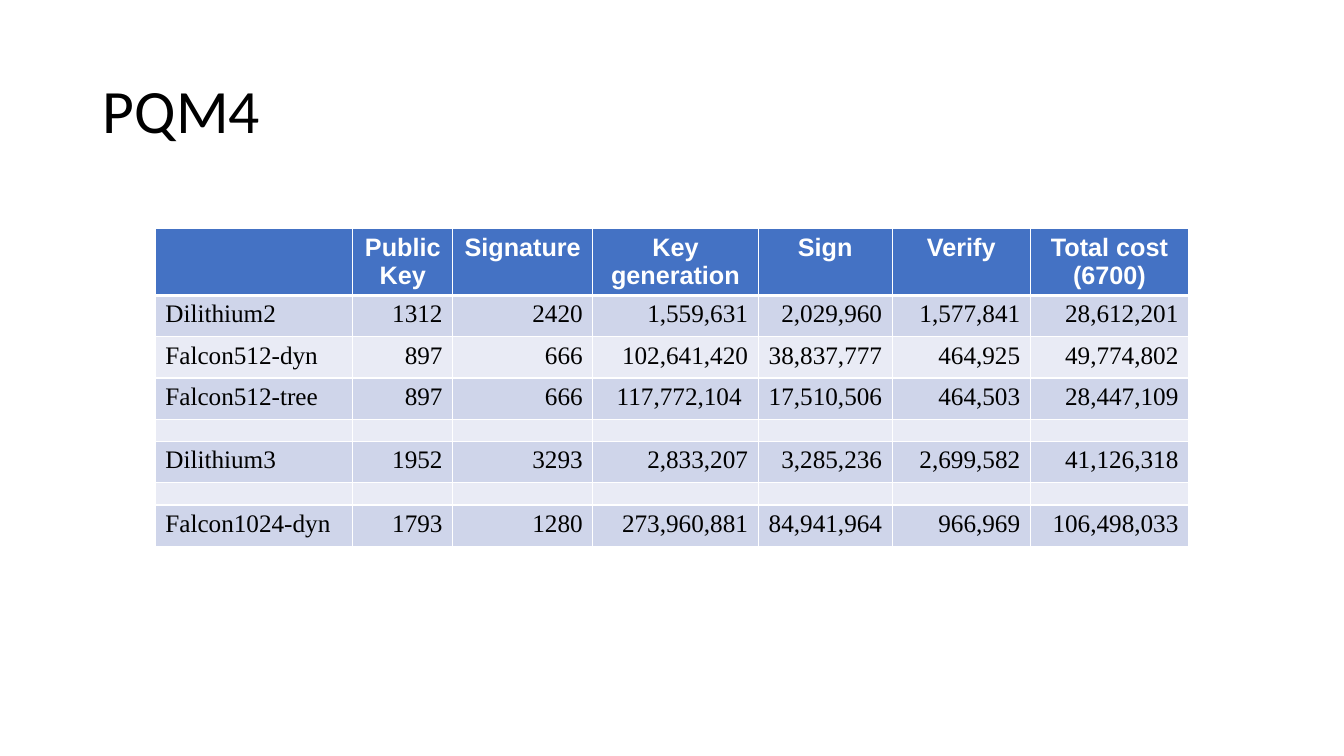
import pptx
import pptx.dml.color
import pptx.enum.text
import pptx.oxml
import pptx.oxml.ns
import pptx.util
import lxml.etree

Inches = pptx.util.Inches
Align = pptx.enum.text.PP_ALIGN

COLORS = {
    "text": "000000",
    "white": "FFFFFF",
    "header": "4472C4",
    "odd": "CFD5EA",
    "even": "E9EBF5",
}

HEADINGS = ["", "Public Key", "Signature", "Key generation", "Sign", "Verify", "Total cost (6700)"]
SPACER = [""] * len(HEADINGS)
RESULTS = [
    ["Dilithium2", "1312", "2420", "1,559,631", "2,029,960", "1,577,841", "28,612,201"],
    ["Falcon512-dyn", "897", "666", "102,641,420", "38,837,777", "464,925", "49,774,802"],
    ["Falcon512-tree", "897", "666", "117,772,104 ", "17,510,506", "464,503", "28,447,109"],
    SPACER,
    ["Dilithium3", "1952", "3293", "2,833,207", "3,285,236", "2,699,582", "41,126,318"],
    SPACER,
    ["Falcon1024-dyn", "1793", "1280", "273,960,881", "84,941,964", "966,969", "106,498,033"],
]
COLUMN_WIDTHS = [1.96, 0.99, 1.39, 1.64, 1.33, 1.37, 1.57]
HEADER_HEIGHT, RESULT_HEIGHT, SPACER_HEIGHT = 0.64, 0.41, 0.22


class SlideBuilder:
    def __init__(self, deck):
        self.page = deck.slides.add_slide(deck.slide_layouts[5])

    def color(self, name):
        return pptx.dml.color.RGBColor.from_string(COLORS[name])

    def add_span(self, para, text, font, size, color, bold=False):
        span = para.add_run()
        span.text = text
        span.font.name = font
        span.font.size = pptx.util.Pt(size)
        span.font.bold = bold
        span.font.color.rgb = self.color(color)

    def title(self, text, left, top, width, height):
        box = self.page.shapes.title
        box.left, box.top = Inches(left), Inches(top)
        box.width, box.height = Inches(width), Inches(height)
        box.text_frame.vertical_anchor = pptx.enum.text.MSO_ANCHOR.MIDDLE
        para = box.text_frame.paragraphs[0]
        para.alignment = Align.LEFT
        para.line_spacing = 0.9
        self.add_span(para, text, "Calibri", 44, "text")

    def borders(self, cell, bottom):
        properties = cell._tc.get_or_add_tcPr()
        for side, points in (("L", 1), ("R", 1), ("T", 1), ("B", bottom)):
            properties.append(pptx.oxml.parse_xml(
                f'<a:ln{side} {pptx.oxml.ns.nsdecls("a")} w="{pptx.util.Pt(points)}">'
                f'<a:solidFill><a:srgbClr val="{COLORS["white"]}"/></a:solidFill>'
                f'</a:ln{side}>'))

    def cell(self, cell, text, fill, align, header):
        self.borders(cell, 3 if header else 1)
        cell.fill.solid()
        cell.fill.fore_color.rgb = self.color(fill)
        para = cell.text_frame.paragraphs[0]
        para.alignment = align
        if not text:
            ending = lxml.etree.SubElement(para._p, pptx.oxml.ns.qn("a:endParaRPr"))
            ending.set("sz", "600")
        elif header:
            self.add_span(para, text, "Arial", 18, "white", True)
        else:
            self.add_span(para, text, "Times New Roman", 18, "text")

    def table(self, left, top, widths, headings, results):
        rows = [headings] + results
        heights = [HEADER_HEIGHT] + [RESULT_HEIGHT if any(row) else SPACER_HEIGHT for row in results]
        table = self.page.shapes.add_table(
            len(rows), len(widths), Inches(left), Inches(top),
            Inches(sum(widths)), Inches(sum(heights))).table
        for column, width in zip(table.columns, widths):
            column.width = Inches(width)
        for row, height in zip(table.rows, heights):
            row.height = Inches(height)
        for r, row in enumerate(rows):
            fill = "header" if r == 0 else ("odd" if r % 2 else "even")
            for c, text in enumerate(row):
                align = Align.CENTER if r == 0 else (Align.RIGHT if c else Align.LEFT)
                self.cell(table.cell(r, c), text, fill, align, r == 0)


def main():
    deck = pptx.Presentation()
    deck.slide_width, deck.slide_height = Inches(13.33), Inches(7.5)
    builder = SlideBuilder(deck)
    builder.title("PQM4", 0.92, 0.4, 11.5, 1.45)
    builder.table(1.54, 2.27, COLUMN_WIDTHS, HEADINGS, RESULTS)
    deck.save("out.pptx")


if __name__ == "__main__":
    main()
